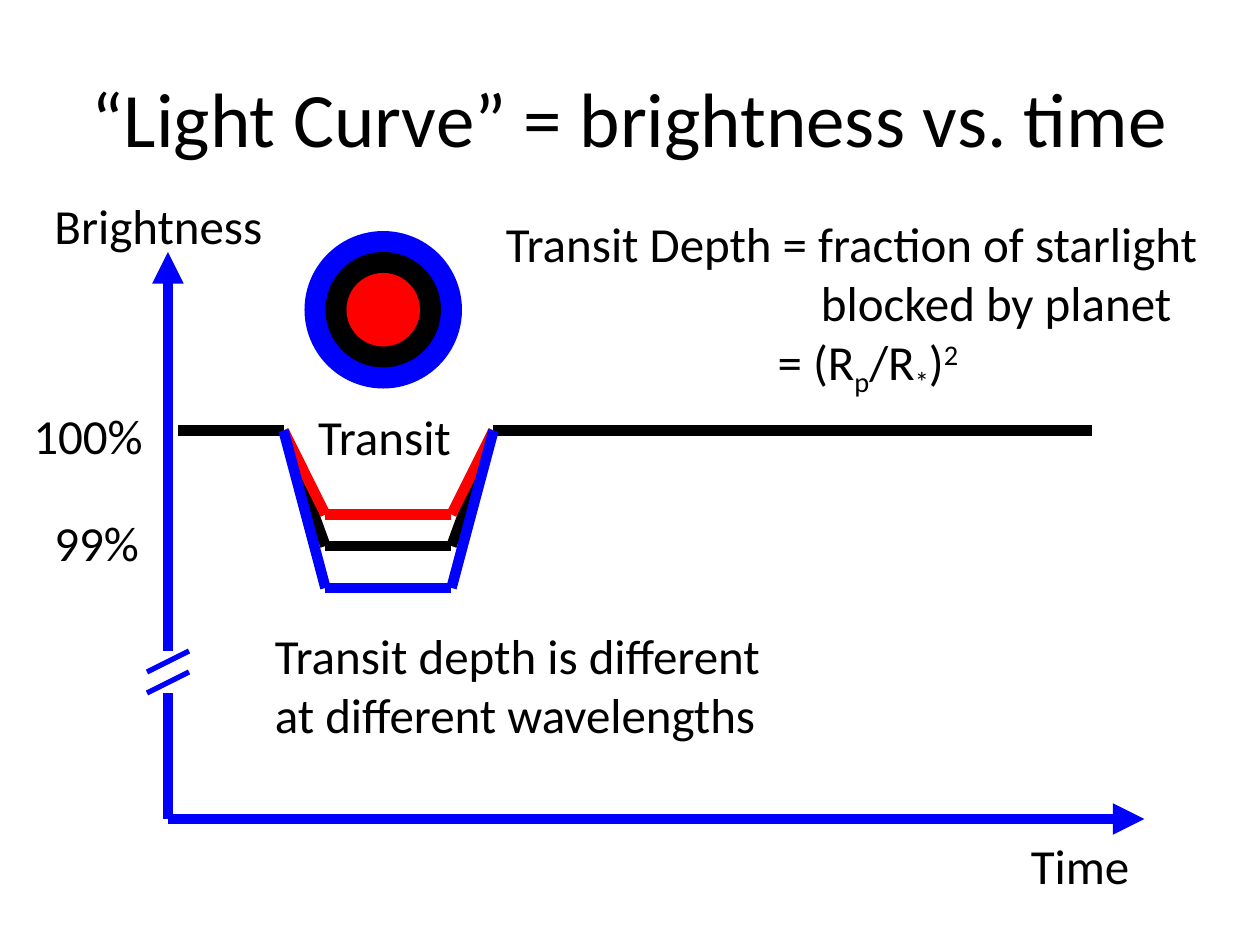
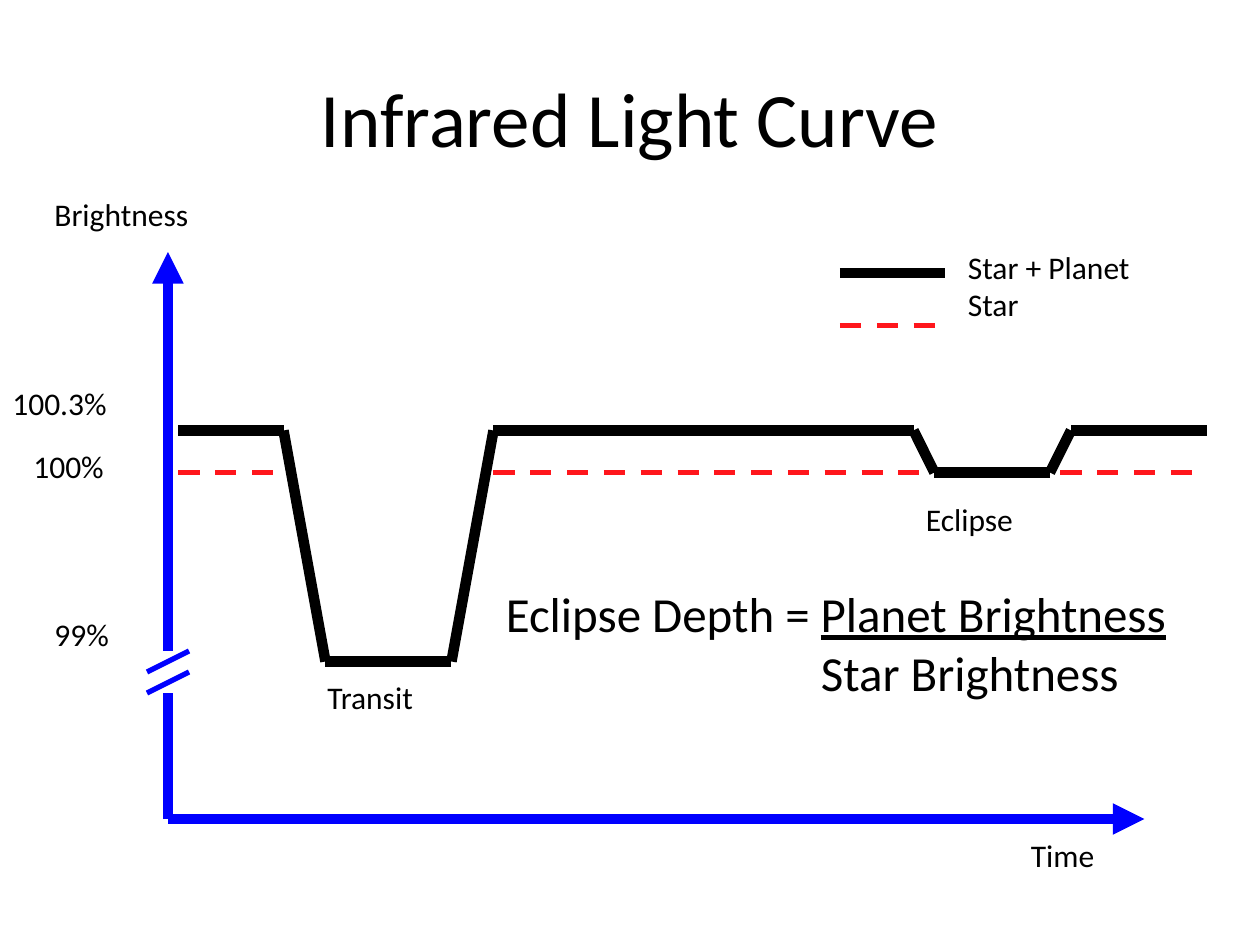
from dataclasses import dataclass
from itertools import pairwise

from lxml.etree import SubElement
from pptx import Presentation
from pptx.dml.color import RGBColor
from pptx.enum.dml import MSO_LINE
from pptx.enum.shapes import MSO_CONNECTOR, MSO_SHAPE
from pptx.enum.text import MSO_ANCHOR, MSO_AUTO_SIZE, PP_ALIGN
from pptx.oxml.ns import qn
from pptx.util import Emu, Pt


@dataclass(frozen=True)
class Theme:
    font: str = "Calibri"
    title: int = 44
    body: int = 28
    label: int = 18
    thick: int = 6
    thin: int = 3
    black: str = "000000"
    blue: str = "0000FF"
    red: str = "FF0000"
    star: str = "FF161C"


THEME = Theme()
SUBSCRIPT, SUPERSCRIPT = -25000, 30000
TITLE_BOX = (48, 29, 864, 120)
AXES_BOX = (128, 192, 744, 432)
CURVE_ORIGIN = (136, 328)
TRANSIT = (80, 112, 208, 240)
ECLIPSE = (560, 576, 664, 680)


def px(length):
    """96 px to the inch."""
    return Emu(length * 9525)


@dataclass(frozen=True)
class Span:
    text: str
    baseline: int = 0
    underline: bool = False


@dataclass(frozen=True)
class Line:
    spans: tuple
    indent: int = 0


# Shared drawing

def add_text(page, box, lines, size, align=PP_ALIGN.LEFT, wrap=False):
    shape = page.shapes.add_textbox(*map(px, box))
    frame = shape.text_frame
    frame.word_wrap = wrap
    frame.auto_size = MSO_AUTO_SIZE.SHAPE_TO_FIT_TEXT
    for index, line in enumerate(lines):
        if isinstance(line, str):
            line = Line((Span(line),))
        para = frame.paragraphs[0] if index == 0 else frame.add_paragraph()
        para.alignment = align
        if line.indent:
            para._p.get_or_add_pPr().set("marL", str(px(line.indent)))
        for span in line.spans:
            run = para.add_run()
            run.text = span.text
            run.font.name = THEME.font
            run.font.size = Pt(size)
            run.font.color.rgb = RGBColor.from_string(THEME.black)
            if span.underline:
                run.font.underline = True
            if span.baseline:
                run._r.get_or_add_rPr().set("baseline", str(span.baseline))
    return frame


def add_line(page, start, end, color, width=THEME.thick, dash=False, arrow=False):
    line = page.shapes.add_connector(
        MSO_CONNECTOR.STRAIGHT, *map(px, (*start, *end)))
    line.line.color.rgb = RGBColor.from_string(color)
    line.line.width = Pt(width)
    if dash:
        line.line.dash_style = MSO_LINE.DASH
    if arrow:
        SubElement(line.line._get_or_add_ln(), qn("a:tailEnd"), type="triangle")
    SubElement(line._element.spPr, qn("a:effectLst"))


def add_curve(page, points, color):
    left, top = CURVE_ORIGIN
    placed = [(left + x, top + y) for x, y in points]
    for start, end in pairwise(placed):
        add_line(page, start, end, color)


def dip(edges, depth):
    return list(zip(edges, (0, depth, depth, 0)))


def add_title(page, text):
    frame = add_text(page, TITLE_BOX, [text], THEME.title, PP_ALIGN.CENTER, wrap=True)
    frame.auto_size = MSO_AUTO_SIZE.NONE
    frame.vertical_anchor = MSO_ANCHOR.MIDDLE


def add_axes(page, box, size):
    left, top, width, height = box
    bottom = top + height
    # Brightness axis, with a gap where the scale is broken
    add_line(page, (left, bottom - 128), (left, top), THEME.blue, arrow=True)
    add_line(page, (left, bottom), (left, bottom - 96), THEME.blue)
    for rise in (112, 96):
        add_line(page, (left - 16, bottom - rise), (left + 16, bottom - rise - 16),
                 THEME.blue, THEME.thin)
    # Time axis
    add_line(page, (left, bottom), (left + width, bottom), THEME.blue, arrow=True)
    add_text(page, (left - 96, top - 48, 180, 55), ["Brightness"], size)
    add_text(page, (left + width - 96, bottom + 8, 95, 55), ["Time"], size)


# Parts of single slides

def add_wavelength_discs(page, box):
    left, top, side = box
    for ring, color in enumerate((THEME.blue, THEME.black, THEME.red)):
        inset = 16 * ring
        disc = page.shapes.add_shape(
            MSO_SHAPE.OVAL, px(left + inset), px(top + inset),
            px(side - 2 * inset), px(side - 2 * inset))
        disc.shadow.inherit = False
        disc.fill.solid()
        disc.fill.fore_color.rgb = RGBColor.from_string(color)
        disc.line.fill.background()


def add_legend(page, box):
    left, top, width, height = box
    add_line(page, (left, top + 24), (left + 80, top + 24), THEME.black)
    add_line(page, (left, top + 64), (left + 80, top + 64),
             THEME.star, THEME.thin, dash=True)
    add_text(page, (left + 88, top, width - 88, height),
             ["Star + Planet", "Star"], THEME.label)


def add_star_level(page, drop):
    left, top = CURVE_ORIGIN
    for start, end in ((0, 80), (240, 568), (672, 784)):
        add_line(page, (left + start, top + drop), (left + end, top + drop),
                 THEME.star, THEME.thin, dash=True)


# Slides

def build_light_curve(page):
    size = THEME.body
    add_title(page, "“Light Curve” = brightness vs. time")
    add_axes(page, AXES_BOX, size)
    add_text(page, (16, 304, 104, 55), ["100%"], size, wrap=True)
    add_text(page, (32, 386, 84, 55), ["99%"], size)
    add_curve(page, [(0, 0), *dip(TRANSIT, 88), (696, 0)], THEME.black)
    add_text(page, (232, 305, 122, 55), ["Transit"], size, PP_ALIGN.CENTER)
    add_text(page, (376, 158, 552, 145), [
        "Transit Depth = fraction of starlight",
        Line((Span("blocked by planet"),), indent=240),
        Line((Span("= (R"), Span("p", SUBSCRIPT), Span("/R"),
              Span("*", SUBSCRIPT), Span(")"), Span("2", SUPERSCRIPT)), indent=207),
    ], size)
    for depth, color in ((64, THEME.red), (120, THEME.blue)):
        add_curve(page, dip(TRANSIT, depth), color)
    add_text(page, (200, 472, 393, 100),
             ["Transit depth is different", "at different wavelengths"], size)
    add_wavelength_discs(page, (232, 176, 120))


def build_infrared_curve(page):
    size = THEME.label
    add_title(page, "Infrared Light Curve")
    add_axes(page, AXES_BOX, size)
    for text, left, top in (("100.3%", 0, 288), ("100%", 16, 336), ("99%", 32, 464),
                            ("Transit", 240, 512), ("Eclipse", 696, 376)):
        add_text(page, (left, top, 120, 48), [text], size)
    add_curve(page, [(0, 0), *dip(TRANSIT, 176), *dip(ECLIPSE, 32), (784, 0)],
              THEME.black)
    add_text(page, (376, 440, 528, 100), [
        Line((Span("Eclipse Depth = "), Span("Planet Brightness", underline=True))),
        Line((Span("Star Brightness"),), indent=240),
    ], THEME.body)
    add_star_level(page, 32)
    add_legend(page, (640, 184, 293, 86))


def main():
    deck = Presentation()
    deck.slide_width, deck.slide_height = px(960), px(720)
    for build in (build_light_curve, build_infrared_curve):
        build(deck.slides.add_slide(deck.slide_layouts[6]))
    deck.save("out.pptx")


if __name__ == "__main__":
    main()
